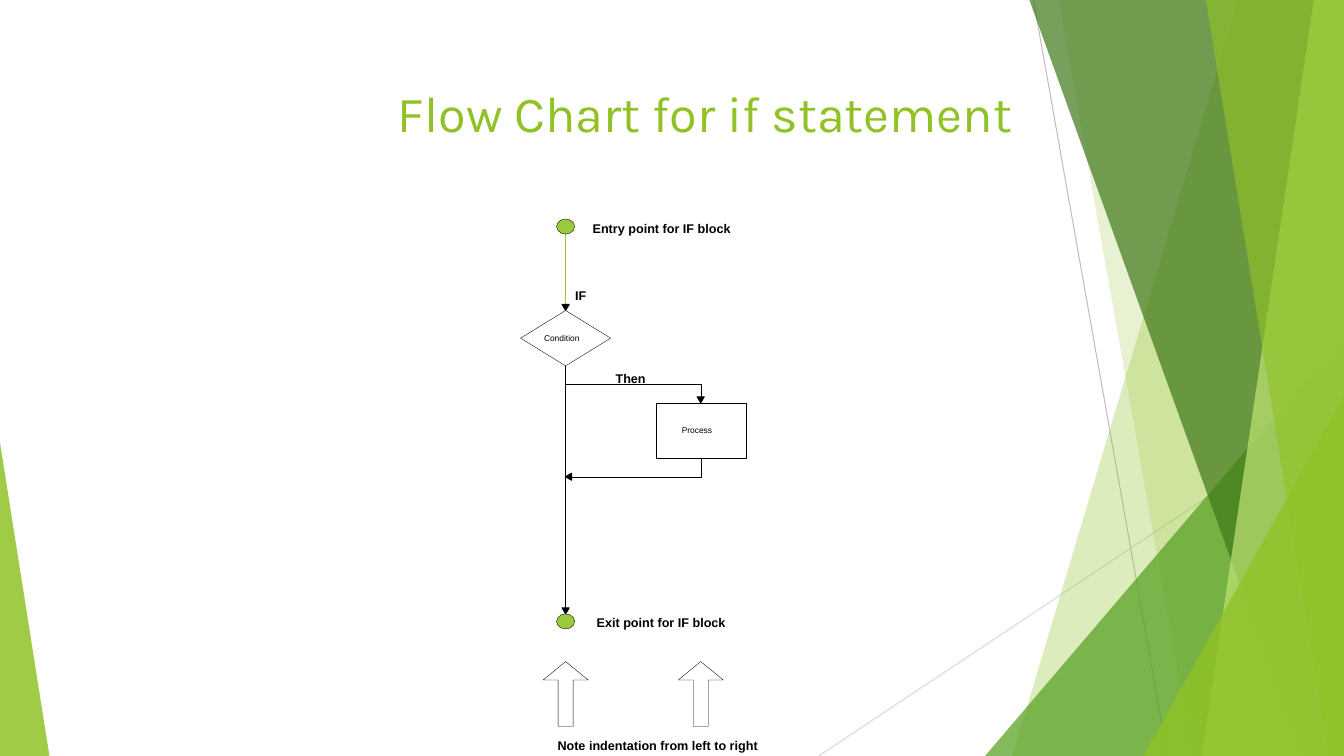
from lxml import etree
from pptx import Presentation, util as u
from pptx.dml.color import RGBColor
from pptx.enum import shapes as kinds, text as texts
from pptx.oxml.ns import qn

THEME = {
    "leaf": "90C226", "green": "54A021", "forest": "3F7819", "lime": "C0E474",
    "dot": "99CA3C", "ink": "000000", "paper": "FFFFFF",
    "rule": "BFBFBF", "pale_rule": "D9D9D9",
    "title_font": "Karla", "label_font": "Arial",
    "title": 36, "label": 9, "node": 6, "hair": 0.25, "thin": 0.75,
}
WIDTH, HEIGHT = 13.33, 7.5

TITLE = "Flow Chart for if statement"
RULES = [((10.25, 0), (11.58, HEIGHT), "rule"),
         ((WIDTH, 4.03), (8.12, HEIGHT), "pale_rule")]
FACETS = [
    ("blade", (12.28, 10.04), "leaf", 30),
    ("blade", (10.5, 11.83), "leaf", 20),
    ("peak", (9.77, 3.33, 3.56, 1), "green", 72),
    ("blade", (10.21, 12.91), "forest", 70),
    ("blade", (13.03, 11.92), "lime", 70),
    ("blade", (11.96, 13.18), "leaf", 65),
    ("peak", (11.34, 3.93, 1.99, 1), "leaf", 80),
    ("peak", (0, 4.39, 0.49, 0), "leaf", 85),
]

AXIS, COLUMN = 5.61, 1.34
TOP, ROW = 3.08, 0.55 / 3
DOT_W, DOT_H = 0.18, 0.15
HEAD_HALF, HEAD_LONG = 0.035, 0.06
DOT_ROWS = [-4.95, 16.42]
FLOWS = [
    ([(0, -4.15), (0, 0)], "dot"),
    ([(0, 3), (0, 16.42)], "ink"),
    ([(0, 4), (1, 4), (1, 5)], "ink"),
    ([(1, 8), (1, 9), (0, 9)], "ink"),
]
DIAMOND = [(-1/3, 1.5), (0, 0), (1/3, 1.5), (0, 3)]
PROCESS = [(2/3, 5), (4/3, 8)]
BLOCK_ARROW = [(0, 19), (-1/6, 20), (-1/18, 20), (-1/18, 22.5),
               (1/18, 22.5), (1/18, 20), (1/6, 20)]
LABELS = [
    ("Condition", -0.16, 1.25, 0.38, "node"),
    ("Process", 0.86, 6.2, 0.34, "node"),
    ("IF", 0.07, -1.2, 0.14, "label"),
    ("Then", 0.37, 3.27, 0.34, "label"),
    ("Entry point for IF block", 0.2, -4.85, 1.42, "label"),
    ("Exit point for IF block", 0.23, 16.47, 1.33, "label"),
    ("Note indentation from left to right", -0.06, 23.13, 2.05, "label"),
]

deck = Presentation()
deck.slide_width, deck.slide_height = u.Inches(WIDTH), u.Inches(HEIGHT)
page = deck.slides.add_slide(deck.slide_layouts[6])


def color(name):
    return RGBColor.from_string(THEME[name])


def place(col, row):
    return AXIS + col * COLUMN, TOP + row * ROW


def paint(shape, fill=None, line=None, weight="hair", opacity=100):
    shape.shadow.inherit = False
    if fill:
        shape.fill.solid()
        shape.fill.fore_color.rgb = color(fill)
        if opacity < 100:
            tint = shape._element.spPr.find(".//" + qn("a:srgbClr"))
            etree.SubElement(tint, qn("a:alpha")).set("val", str(opacity * 1000))
    else:
        shape.fill.background()
    if line:
        shape.line.color.rgb = color(line)
        shape.line.width = u.Pt(THEME[weight])
    else:
        shape.line.fill.background()


def outline(points, close=True):
    first, *rest = [(u.Inches(x), u.Inches(y)) for x, y in points]
    builder = page.shapes.build_freeform(*first, scale=1.0)
    builder.add_line_segments(rest, close=close)
    return builder.convert_to_shape()


def preset(kind, left, top, width, height):
    return page.shapes.add_shape(kind, *map(u.Inches, (left, top, width, height)))


def straight(start, end, line, weight):
    link = page.shapes.add_connector(
        kinds.MSO_CONNECTOR.STRAIGHT, *map(u.Inches, (*start, *end)))
    link.line.color.rgb = color(line)
    link.line.width = u.Pt(THEME[weight])
    etree.SubElement(link._element.spPr, qn("a:effectLst"))


def write(words, left, top, width, height, size, font, tone, bold=False):
    box = page.shapes.add_textbox(*map(u.Inches, (left, top, width, height)))
    para = box.text_frame.paragraphs[0]
    para.text = words
    span = para.runs[0].font
    span.size, span.name, span.bold = u.Pt(THEME[size]), THEME[font], bold
    span.color.rgb = color(tone)
    return box.text_frame


def flow(stops, line):
    (from_col, from_row), (to_col, to_row) = stops[-2:]
    dx = (to_col > from_col) - (to_col < from_col)
    dy = (to_row > from_row) - (to_row < from_row)
    points = [place(*stop) for stop in stops]
    x, y = points[-1]
    base_x, base_y = points[-1] = (x - dx * HEAD_LONG, y - dy * HEAD_LONG)
    if len(points) == 2:
        straight(*points, line, "hair")
    else:
        paint(outline(points, close=False), line=line)
    left, right = [(base_x + side * dy * HEAD_HALF, base_y + side * dx * HEAD_HALF)
                   for side in (-1, 1)]
    paint(outline([left, (x, y), right]), "ink", "ink", "thin")


for start, end, tone in RULES:
    straight(start, end, tone, "thin")
for kind, measures, tone, opacity in FACETS:
    if kind == "blade":
        upper, lower = measures
        facet = outline([(upper, 0), (WIDTH, 0), (WIDTH, HEIGHT), (lower, HEIGHT)])
    else:
        left, top, width, tip = measures
        facet = preset(kinds.MSO_SHAPE.ISOSCELES_TRIANGLE, left, top, width, HEIGHT - top)
        facet.adjustments[0] = tip
    paint(facet, tone, opacity=opacity)

heading = write(TITLE, 2.58, 0.77, 8.83, 1.57, "title", "title_font", "leaf")
heading.word_wrap = True
heading.paragraphs[0].alignment = texts.PP_ALIGN.CENTER

paint(outline([place(*corner) for corner in DIAMOND]), "paper", "ink")
(left, top), (right, bottom) = [place(*corner) for corner in PROCESS]
paint(preset(kinds.MSO_SHAPE.RECTANGLE, left, top, right - left, bottom - top),
      "paper", "ink")
for stops, line in FLOWS:
    flow(stops, line)
for row in DOT_ROWS:
    x, y = place(0, row)
    paint(preset(kinds.MSO_SHAPE.OVAL, x - DOT_W / 2, y, DOT_W, DOT_H), "dot", "ink")
for shift in (0, 1):
    paint(outline([place(col + shift, row) for col, row in BLOCK_ARROW]), "paper", "ink")

for words, col, row, width, size in LABELS:
    frame = write(words, *place(col, row), width, THEME[size] / 60,
                  size, "label_font", "ink", size == "label")
    frame.margin_left = frame.margin_right = frame.margin_top = frame.margin_bottom = 0
    frame.word_wrap = False
    frame.auto_size = texts.MSO_AUTO_SIZE.SHAPE_TO_FIT_TEXT

deck.save("out.pptx")
